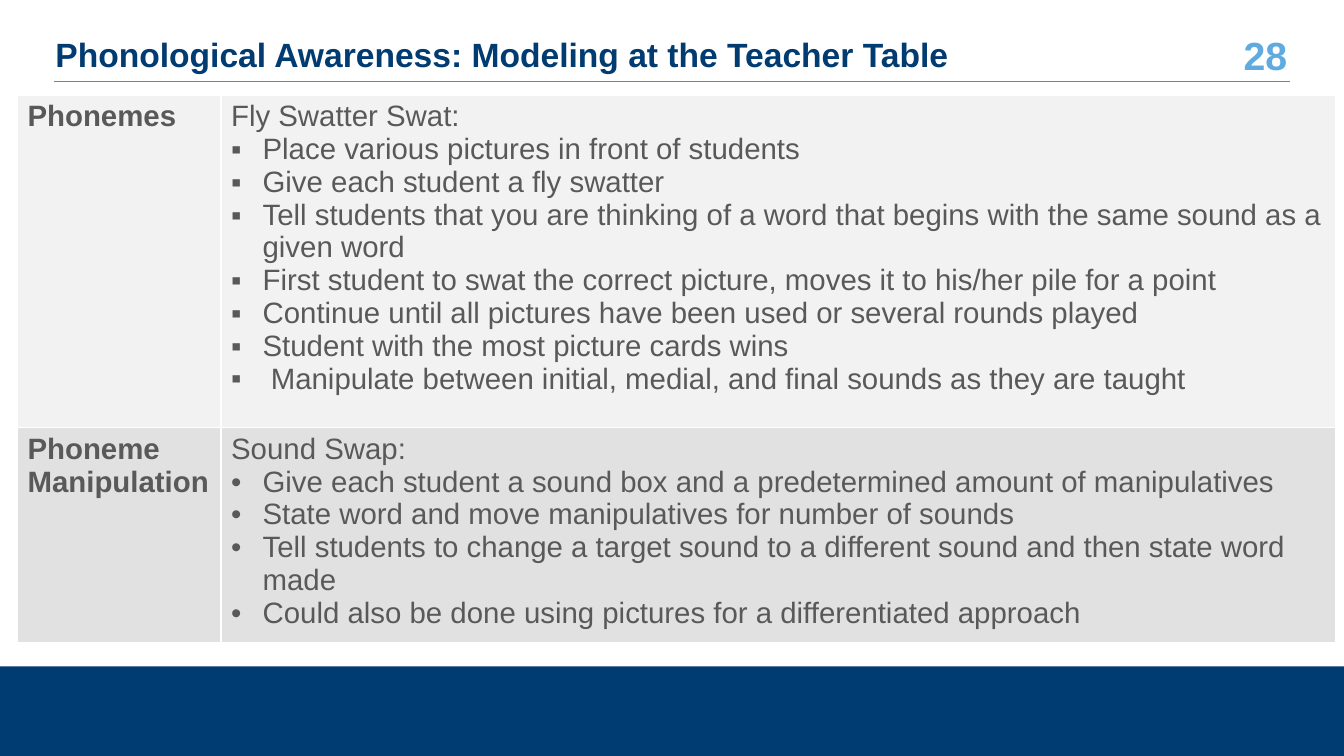
from dataclasses import dataclass

from lxml import etree
from pptx import Presentation
from pptx.dml.color import RGBColor
from pptx.enum.shapes import MSO_CONNECTOR, MSO_SHAPE
from pptx.enum.text import MSO_ANCHOR, MSO_AUTO_SIZE, PP_ALIGN
from pptx.oxml.ns import qn
from pptx.util import Pt

RECTANGLE = MSO_SHAPE.RECTANGLE
STRAIGHT = MSO_CONNECTOR.STRAIGHT
MIDDLE = MSO_ANCHOR.MIDDLE
NO_AUTOFIT = MSO_AUTO_SIZE.NONE
LEFT, RIGHT = PP_ALIGN.LEFT, PP_ALIGN.RIGHT

NAVY = RGBColor(0x00, 0x3B, 0x71)
SKY = RGBColor(0x5F, 0xAA, 0xDE)
RULE_GRAY = RGBColor(0x80, 0x80, 0x80)
TEXT_GRAY = RGBColor(0x59, 0x59, 0x59)
LIGHT_GRAY = RGBColor(0xF2, 0xF2, 0xF2)
MID_GRAY = RGBColor(0xE1, 0xE1, 0xE1)

FONT = "Arial"
INDENT = Pt(22.5)
COLUMN_WIDTHS = (145.4, 796.3)


@dataclass
class Activity:
    skill: str
    name: str
    bullet: str
    steps: list[str]
    fill: RGBColor
    height: float


ACTIVITIES = [
    Activity("Phonemes", "Fly Swatter Swat:", "▪", [
        "Place various pictures in front of students",
        "Give each student a fly swatter",
        "Tell students that you are thinking of a word that begins with the same sound as a given word",
        "First student to swat the correct picture, moves it to his/her pile for a point",
        "Continue until all pictures have been used or several rounds played",
        "Student with the most picture cards wins",
        " Manipulate between initial, medial, and final sounds as they are taught",
    ], LIGHT_GRAY, 237.6),
    Activity("Phoneme Manipulation", "Sound Swap:", "•", [
        "Give each student a sound box and a predetermined amount of manipulatives",
        "State word and move manipulatives for number of sounds",
        "Tell students to change a target sound to a different sound and then state word made",
        "Could also be done using pictures for a differentiated approach",
    ], MID_GRAY, 153.4),
]


def style_runs(p, size: float, color: RGBColor, bold: bool) -> None:
    for r in p.runs:
        r.font.name = FONT
        r.font.size = Pt(size)
        r.font.bold = bold
        r.font.color.rgb = color


def add_bullet(p, char: str) -> None:
    """Give a paragraph a hanging indent and a bullet character."""
    pPr = p._p.get_or_add_pPr()
    pPr.set("marL", str(INDENT))
    pPr.set("indent", str(-INDENT))
    etree.SubElement(pPr, qn("a:buFont"), typeface=FONT)
    etree.SubElement(pPr, qn("a:buChar"), char=char)


def add_white_borders(cell) -> None:
    tcPr = cell._tc.get_or_add_tcPr()
    for i, side in enumerate(("lnL", "lnR", "lnT", "lnB")):
        ln = etree.Element(qn(f"a:{side}"), w=str(Pt(1)))
        fill = etree.SubElement(ln, qn("a:solidFill"))
        etree.SubElement(fill, qn("a:srgbClr"), val="FFFFFF")
        tcPr.insert(i, ln)


def format_line_box(sp, align: PP_ALIGN, size: float, color: RGBColor) -> None:
    """Centre a one-line heading vertically and set its bold type."""
    tf = sp.text_frame
    tf.word_wrap = True
    tf.auto_size = NO_AUTOFIT
    tf.vertical_anchor = MIDDLE
    tf.paragraphs[0].alignment = align
    style_runs(tf.paragraphs[0], size, color, True)


def add_frame(slide) -> None:
    """Draw the footer band, the page number and the rule under the title."""
    band = slide.shapes.add_shape(RECTANGLE, Pt(0), Pt(475.9), Pt(960), Pt(64.1))
    band.shadow.inherit = False
    band.fill.solid()
    band.fill.fore_color.rgb = NAVY
    band.line.fill.background()

    number = slide.shapes.add_textbox(Pt(869), Pt(23.8), Pt(57.6), Pt(30.2))
    number.text_frame.text = "28"
    format_line_box(number, RIGHT, 28, SKY)

    rule = slide.shapes.add_connector(STRAIGHT, Pt(921.6), Pt(58), Pt(38.9), Pt(58))
    rule.line.color.rgb = RULE_GRAY
    rule.line.width = Pt(0.5)
    etree.SubElement(rule._element.spPr, qn("a:effectLst"))


def set_title(slide) -> None:
    title = slide.shapes.title
    title.left, title.top, title.width, title.height = Pt(32.4), Pt(21.6), Pt(835.2), Pt(30.2)
    title.text_frame.text = "Phonological Awareness: Modeling at the Teacher Table"
    title.text_frame.paragraphs[0].line_spacing = 1.15
    format_line_box(title, LEFT, 24, NAVY)


def fill_row(row, activity: Activity) -> None:
    row.height = Pt(activity.height)
    skill, detail = row.cells
    for cell in (skill, detail):
        cell.fill.solid()
        cell.fill.fore_color.rgb = activity.fill
        add_white_borders(cell)
    skill.text_frame.text = activity.skill
    style_runs(skill.text_frame.paragraphs[0], 21, TEXT_GRAY, True)

    tf = detail.text_frame
    tf.text = activity.name
    for step in activity.steps:
        p = tf.add_paragraph()
        p.text = step
        add_bullet(p, activity.bullet)
    for p in tf.paragraphs:
        style_runs(p, 21, TEXT_GRAY, False)


def add_activity_table(slide) -> None:
    height = sum(a.height for a in ACTIVITIES)
    table = slide.shapes.add_table(
        len(ACTIVITIES), len(COLUMN_WIDTHS),
        Pt(12.5), Pt(68), Pt(sum(COLUMN_WIDTHS)), Pt(height)).table
    table.first_row = False
    table.horz_banding = False
    for column, width in zip(table.columns, COLUMN_WIDTHS):
        column.width = Pt(width)
    for row, activity in zip(table.rows, ACTIVITIES):
        fill_row(row, activity)


def main() -> None:
    prs = Presentation()
    prs.slide_width, prs.slide_height = Pt(960), Pt(540)
    slide = prs.slides.add_slide(prs.slide_layouts[5])
    add_frame(slide)
    set_title(slide)
    add_activity_table(slide)
    prs.save("out.pptx")


if __name__ == "__main__":
    main()
